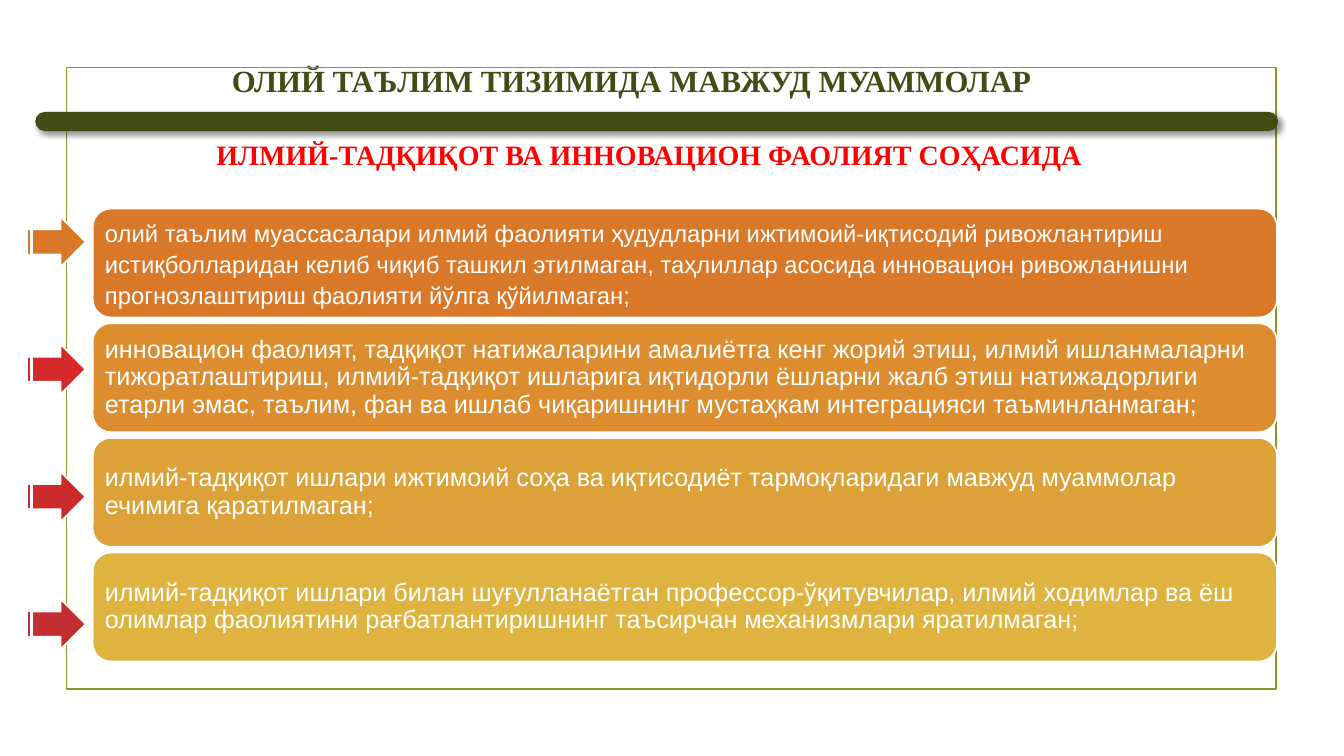
from lxml import etree
from pptx import Presentation
from pptx.dml.color import RGBColor
from pptx.enum import shapes, text
from pptx.oxml import parse_xml
from pptx.util import Pt

COLORS = {"frame": "83992A", "olive": "414D15", "red": "FF0000", "white": "FFFFFF"}
SANS, SERIF = "Arial", "Times New Roman"

# box fill, arrow fill, size, line spacing, wording
PROBLEMS = [
    ("D97828", "D97828", 17, 1.07,
     "олий таълим муассасалари илмий фаолияти ҳудудларни ижтимоий-иқтисодий "
     "ривожлантириш истиқболларидан келиб чиқиб ташкил этилмаган, таҳлиллар асосида "
     "инновацион ривожланишни прогнозлаштириш фаолияти йўлга қўйилмаган;"),
    ("DB8D30", "D4292B", 18, 0.9,
     "инновацион фаолият, тадқиқот натижаларини амалиётга кенг жорий этиш, илмий "
     "ишланмаларни тижоратлаштириш, илмий-тадқиқот ишларига иқтидорли ёшларни жалб этиш "
     "натижадорлиги етарли эмас, таълим, фан ва ишлаб чиқаришнинг мустаҳкам "
     "интеграцияси таъминланмаган;"),
    ("DCA138", "CC2B2C", 18, 0.9,
     "илмий-тадқиқот ишлари ижтимоий соҳа ва иқтисодиёт тармоқларидаги мавжуд "
     "муаммолар ечимига қаратилмаган;"),
    ("DEB340", "C52E30", 18, 0.9,
     "илмий-тадқиқот ишлари билан шуғулланаётган профессор-ўқитувчилар, илмий ходимлар "
     "ва ёш олимлар фаолиятини рағбатлантиришнинг таъсирчан механизмлари яратилмаган;"),
]


def add_shape(kind, left, top, width, height, fill=None, line=None):
    sp = s.shapes.add_shape(kind, Pt(left), Pt(top), Pt(width), Pt(height))
    sp.shadow.inherit = False
    if fill:
        sp.fill.solid()
        sp.fill.fore_color.rgb = RGBColor.from_string(fill)
    else:
        sp.fill.background()
    if line:
        sp.line.color.rgb = RGBColor.from_string(line)
        sp.line.width = Pt(1.25)
    else:
        sp.line.fill.background()
    return sp


def write(sp, wording, font, size, color, bold, align, anchor):
    tf = sp.text_frame
    tf.word_wrap = True
    tf.auto_size = text.MSO_AUTO_SIZE.NONE
    tf.vertical_anchor = anchor
    p = tf.paragraphs[0]
    p.text = wording
    p.alignment = align
    p.font.name, p.font.size, p.font.bold = font, Pt(size), bold
    p.font.color.rgb = RGBColor.from_string(color)
    return tf


prs = Presentation()
prs.slide_width, prs.slide_height = Pt(960), Pt(540)
s = prs.slides.add_slide(prs.slide_layouts[5])
kinds, left, top = shapes.MSO_SHAPE, text.PP_ALIGN.LEFT, text.MSO_ANCHOR.TOP

add_shape(kinds.RECTANGLE, 47.5, 48.2, 864, 444, line=COLORS["frame"])

title = s.shapes.title
title.left, title.top, title.width, title.height = Pt(158.4), Pt(40.3), Pt(715.7), Pt(33.8)
write(title, "ОЛИЙ ТАЪЛИМ ТИЗИМИДА МАВЖУД МУАММОЛАР", SERIF, 22, COLORS["olive"],
      True, left, top)

subtitle = s.shapes.add_textbox(Pt(33.1), Pt(95), Pt(861.1), Pt(31.7))
write(subtitle, "ИЛМИЙ-ТАДҚИҚОТ ВА ИННОВАЦИОН ФАОЛИЯТ СОҲАСИДА", SERIF, 20, COLORS["red"],
      True, text.PP_ALIGN.CENTER, top)

for i, (box_fill, arrow_fill, size, spacing, wording) in enumerate(PROBLEMS):
    box = add_shape(kinds.ROUNDED_RECTANGLE, 66.2, 149 + 81.9 * i, 846, 77.8,
                    box_fill, COLORS["white"])
    tf = write(box, wording, SANS, size, COLORS["white"], False, left, text.MSO_ANCHOR.MIDDLE)
    tf.margin_left = tf.margin_right = tf.margin_top = tf.margin_bottom = Pt(5)
    tf.paragraphs[0].line_spacing = spacing
    add_shape(kinds.STRIPED_RIGHT_ARROW, 17.3, 154.8 + 91 * i, 43.9, 36,
              arrow_fill, COLORS["white"])

bar = add_shape(kinds.ROUNDED_RECTANGLE, 25.2, 79.9, 887.8, 13.7, COLORS["olive"])
bar.adjustments[0] = 0.5
effects = bar.element.spPr.find("{http://schemas.openxmlformats.org/drawingml/2006/main}effectLst")
effects.append(parse_xml(
    '<a:outerShdw xmlns:a="http://schemas.openxmlformats.org/drawingml/2006/main" '
    f'blurRad="{Pt(4)}" dist="{Pt(3)}" dir="2700000" algn="tl" rotWithShape="0">'
    '<a:srgbClr val="000000"><a:alpha val="40000"/></a:srgbClr></a:outerShdw>'))

prs.save("out.pptx")
